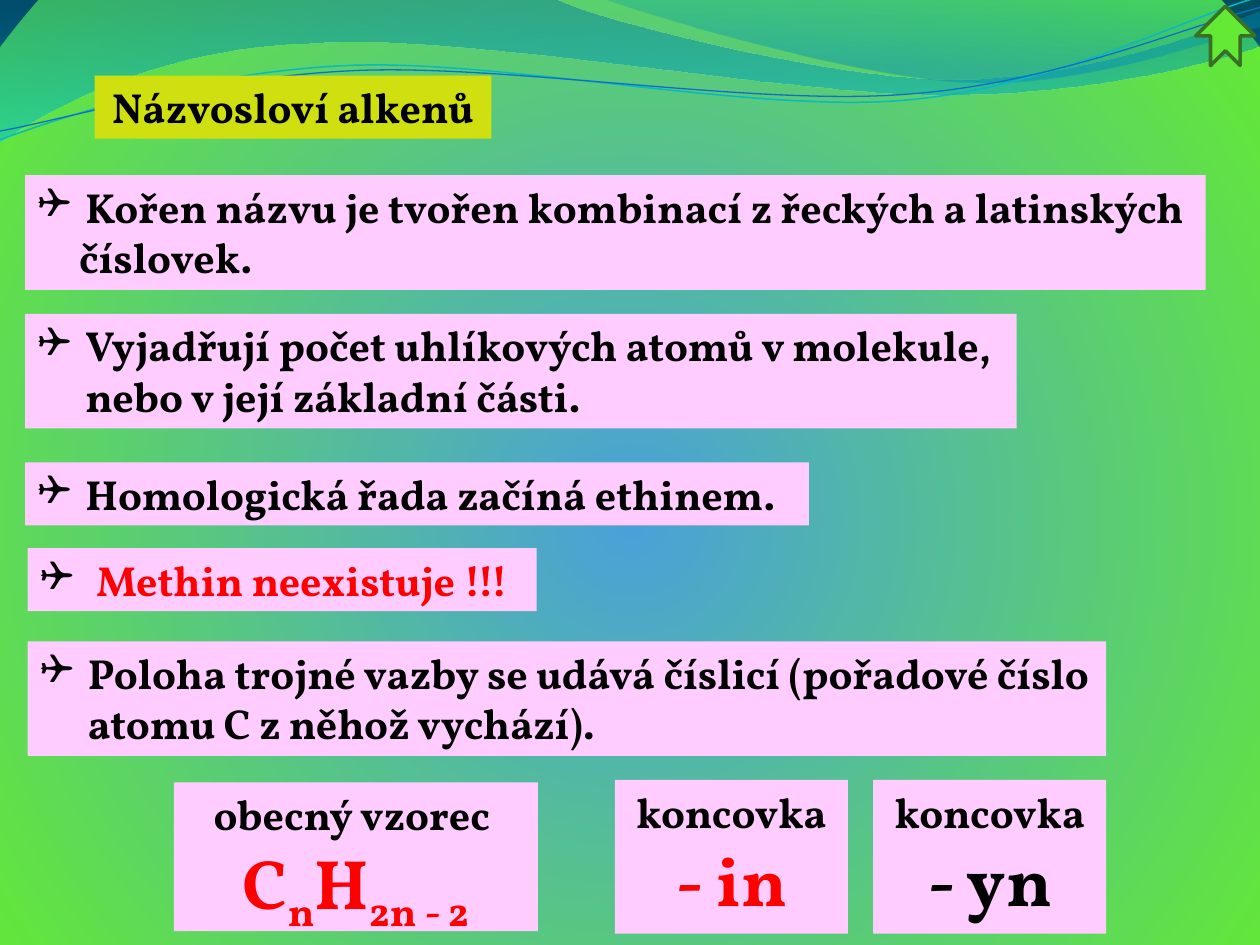
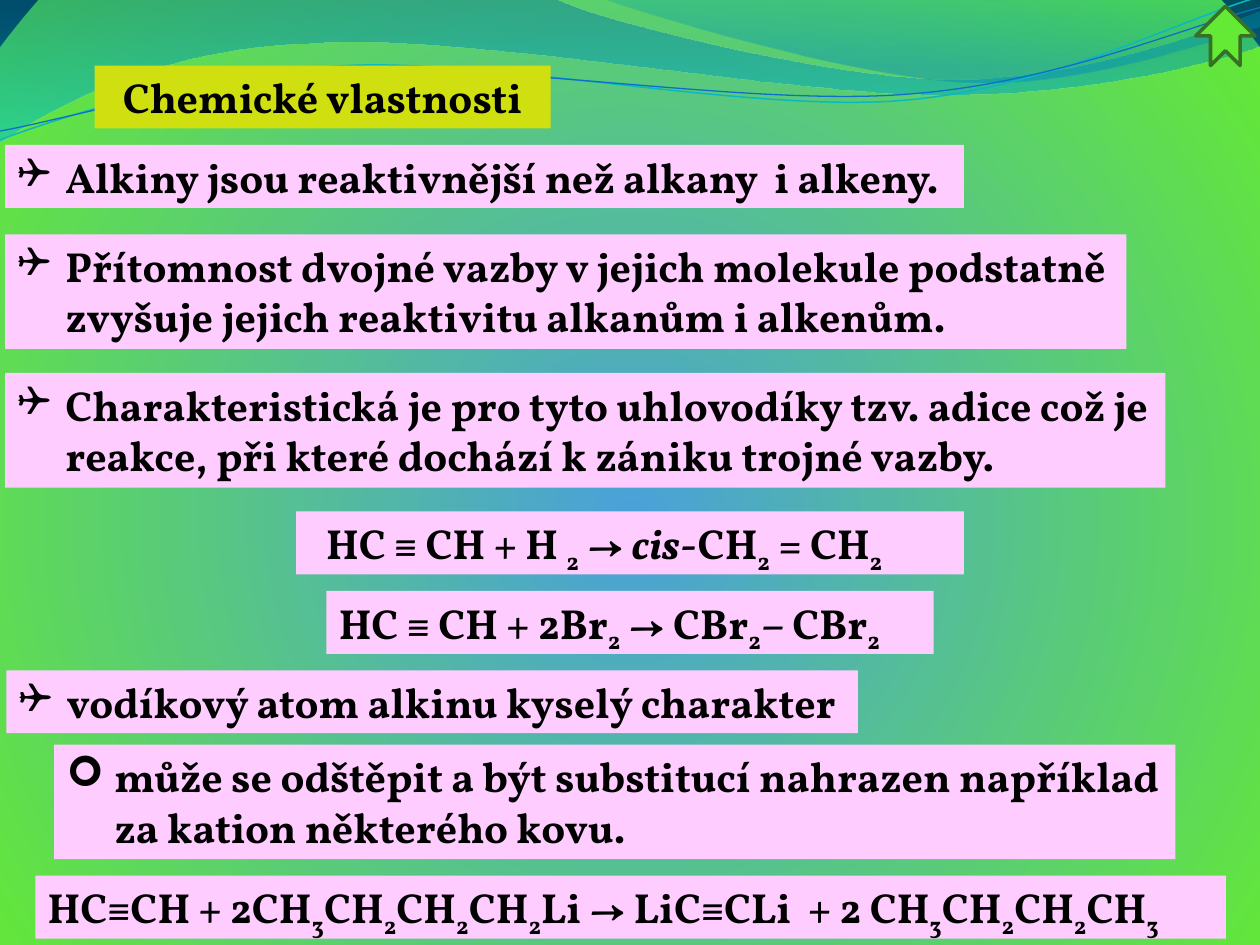
import lxml.etree
import pptx
import pptx.dml.color
import pptx.enum.shapes
import pptx.enum.text
import pptx.oxml
import pptx.oxml.ns
import pptx.util

Inches, Pt = pptx.util.Inches, pptx.util.Pt
qn = pptx.oxml.ns.qn
text_enum = pptx.enum.text

BLACK, RED, PINK, LIME, GREEN = "000000", "FF0000", "FFCCFF", "D0DF0F", "64E935"
FONT = {"name": "Vollkorn", "bold": True}
FRAME = {
    "word_wrap": True,
    "vertical_anchor": text_enum.MSO_ANCHOR.TOP,
    "margin_left": Inches(0.1), "margin_right": Inches(0.1),
    "margin_top": Inches(0.05), "margin_bottom": Inches(0.05),
}
# Left margin and first-line indent of each kind of paragraph
DENT = {"❑": (0.38, -0.38), "➢": (0.38, -0.38), "inset": (0.14, 0), "more": (0.33, 0)}


def tint(fill, shade):
    """Make a fill (of a shape, line or font) solid in a hex colour."""
    fill.solid()
    fill.fore_color.rgb = pptx.dml.color.RGBColor.from_string(shade)


def blend(fill, root, stops, aim):
    """Set a gradient of (percent, hex, opacity) stops; aim is its direction as XML."""
    fill.gradient()
    old = root.find(".//" + qn("a:gradFill"))
    marks = "".join(
        f'<a:gs pos="{pos * 1000}"><a:srgbClr val="{shade}">'
        f'<a:alpha val="{alpha * 1000}"/></a:srgbClr></a:gs>'
        for pos, shade, alpha in stops)
    new = pptx.oxml.parse_xml(
        f'<a:gradFill {pptx.oxml.ns.nsdecls("a")} rotWithShape="1">'
        f"<a:gsLst>{marks}</a:gsLst>{aim}</a:gradFill>")
    old.getparent().replace(old, new)


deck = pptx.Presentation()
deck.slide_width, deck.slide_height = Inches(10), Inches(7.5)
master = deck.slide_master
slides = [deck.slides.add_slide(deck.slide_layouts[5]) for _ in range(2)]

# Shared background
blend(master.background.fill, master._element,
      [(0, "4AA0DA", 100), (100, GREEN, 100), (100, "002C40", 100)],
      '<a:path path="circle"><a:fillToRect l="10000" t="110000" r="10000" b="100000"/></a:path>')

# Waves: a start point, then line ends (2 numbers) or Bezier curves (6 numbers)
DOWN = '<a:lin ang="5400000" scaled="1"/>'
waves = [
    ([(0, 0), (4.4, -0.01), (4.76, 0.17, 6.64, 0.63, 7.58, 0.63),
      (8.53, 0.63, 9.58, 0.26, 10, 0.09), (10.01, 0.36),
      (9.83, 0.44, 8.7, 0.76, 7.46, 0.75), (6.22, 0.75, 3.82, 0.28, 2.57, 0.34),
      (1.29, 0.36, 0.46, 0.83, -0.01, 1.13)],
     [(0, "0074A1", 45), (100, "00C6CF", 55)], None),
    ([(4.79, -0.01), (5.09, 0.11, 6.82, 0.62, 7.69, 0.65),
      (8.56, 0.69, 9.61, 0.32, 10, 0.21), (10, 0)],
     [(0, "00A1A9", 30), (80, "008BBF", 45)], None),
    ([(0, 1.11), (0.48, 0.93, 1.58, 0.57, 2.77, 0.52),
      (3.95, 0.47, 5.93, 0.89, 7.13, 0.8), (8.33, 0.71, 9.38, 0.15, 9.98, -0.02)],
     None, ("0AB8BF", 0.85)),
    ([(0, 1.04), (0.47, 0.96, 1.64, 0.61, 2.83, 0.56),
      (4.03, 0.51, 5.97, 0.84, 7.17, 0.75), (8.36, 0.67, 9.41, 0.21, 10, 0.06)],
     None, ("0F6FC6", 0.75)),
]
for number, (route, stops, stroke) in enumerate(waves):
    ends = [(Inches(part[-2]), Inches(part[-1])) for part in route]
    pen = slides[0].shapes.build_freeform(*ends[0], scale=1.0)
    pen.add_line_segments(ends[1:], close=stops is not None)
    wave = pen.convert_to_shape()
    wave.shadow.inherit = False
    # Bend the straight segments that have control points
    legs = list(wave._element.iter(qn("a:lnTo")))
    for leg, part in zip(legs, route[1:]):
        if len(part) == 6:
            bend = lxml.etree.Element(qn("a:cubicBezTo"))
            for x, y in zip(part[::2], part[1::2]):
                dot = lxml.etree.SubElement(bend, qn("a:pt"))
                dot.set("x", str(Inches(x) - wave.left))
                dot.set("y", str(Inches(y) - wave.top))
            leg.getparent().replace(leg, bend)
    if stops:
        blend(wave.fill, wave._element, stops, DOWN)
        wave.line.fill.background()
    else:
        wave.fill.background()
        tint(wave.line.fill, stroke[0])
        wave.line.width = Pt(stroke[1])
    wave._element.nvSpPr.cNvPr.set("id", str(101 + number))
    master.shapes._spTree.append(wave._element)

# Boxes: left, top, width, height, kind, lines; a line is text or (text, size, colour, kind).
# In a text, "|" parts the runs, "_" opens a subscript, "*" an italic and "/" a new line;
# a leading "+" carries on the paragraph before.
names = [
    (0.75, 0.6, 3.15, 0.5, "title", ["Názvosloví alkenů"]),
    (0.2, 2.49, 7.87, 0.91, "❑",
     ["Vyjadřují počet uhlíkových atomů v molekule, |/nebo v její základní části."]),
    (0.2, 1.39, 9.37, 0.91, "❑",
     ["Kořen názvu je tvořen kombinací z řeckých a latinských ",
      ("číslovek.", 24, BLACK, "more")]),
    (0.2, 3.67, 6.22, 0.5, "❑", ["Homologická řada začíná ethinem."]),
    (1.38, 6.21, 2.89, 1.18, "centre",
     ["obecný vzorec  ", ("+C|_n|H|_2n - 2", 40, RED, "centre")]),
    (4.88, 6.19, 1.85, 1.22, "centre", ["koncovka", ("- in", 40, RED, "centre")]),
    (0.22, 5.09, 8.56, 0.91, "❑",
     ["Poloha trojné vazby se udává číslicí (pořadové číslo atomu C z něhož vychází)."]),
    (0.22, 4.35, 4.04, 0.5, "❑", [" ", ("+Methin neexistuje !!!", 24, RED, "❑")]),
    (6.93, 6.19, 1.85, 1.22, "centre", ["koncovka", ("- yn", 40, BLACK, "centre")]),
]
traits = [
    (0.75, 0.52, 3.62, 0.5, "title", ["Chemické vlastnosti"]),
    (0.04, 1.15, 7.61, 0.5, "❑", ["Alkiny jsou reaktivnější než alkany  i alkeny."]),
    (0.04, 1.86, 8.9, 0.91, "❑",
     ["Přítomnost dvojné vazby v jejich molekule podstatně "
      "zvyšuje jejich reaktivitu alkanům i alkenům."]),
    (0.04, 2.96, 9.21, 0.91, "❑",
     ["Charakteristická je pro tyto uhlovodíky tzv. adice což je "
      "reakce, při které dochází k zániku trojné vazby."]),
    (2.35, 4.06, 5.3, 0.5, "inset", ["HC ≡ CH + H |_2| → |*cis|-CH|_2| = CH|_2"]),
    (0.43, 5.91, 8.9, 0.91, "➢",
     ["může se odštěpit a být substitucí nahrazen například za kation některého kovu."]),
    (0.05, 5.32, 6.76, 0.5, "❑", ["vodíkový atom alkinu kyselý charakter"]),
    (2.59, 4.69, 4.82, 0.5, "plain", ["HC ≡ CH + 2Br|_2| → CBr|_2|– CBr|_2"]),
    (0.28, 6.95, 9.45, 0.5, "plain",
     ["HC≡CH + 2CH|_3|CH|_2|CH|_2|CH|_2|Li → LiC≡CLi  + 2 CH|_3|CH|_2|CH|_2|CH|_3"]),
]

for slide, boxes in zip(slides, (names, traits)):
    for left, top, width, height, kind, lines in boxes:
        place = [Inches(v) for v in (left, top, width, height)]
        if kind == "title":
            box = slide.shapes.title
            box.left, box.top, box.width, box.height = place
        else:
            box = slide.shapes.add_textbox(*place)
        tint(box.fill, LIME if kind == "title" else PINK)
        frame = box.text_frame
        for key, value in FRAME.items():
            setattr(frame, key, value)
        size_rule = text_enum.MSO_AUTO_SIZE
        frame.auto_size = size_rule.NONE if kind == "title" else size_rule.SHAPE_TO_FIT_TEXT
        for i, line in enumerate(lines):
            words, size, shade, sort = (
                (line, 24, BLACK, kind) if isinstance(line, str) else line)
            if not words.startswith("+"):
                para = frame.add_paragraph() if i else frame.paragraphs[0]
                centred = sort in ("title", "centre")
                para.alignment = text_enum.PP_ALIGN.CENTER if centred else text_enum.PP_ALIGN.LEFT
                props = para._p.get_or_add_pPr()
                if sort in DENT:
                    for key, value in zip(("marL", "indent"), DENT[sort]):
                        props.set(key, str(Inches(value)))
                if sort in ("❑", "➢"):
                    lxml.etree.SubElement(props, qn("a:buFont")).set("typeface", "Wingdings")
                    lxml.etree.SubElement(props, qn("a:buChar")).set("char", sort)
            for piece in words.removeprefix("+").split("|"):
                if piece.startswith("/"):
                    para.add_line_break()
                run = para.add_run()
                run.text = piece.lstrip("_*/")
                for key, value in FONT.items():
                    setattr(run.font, key, value)
                run.font.size = Pt(size)
                tint(run.font.fill, shade)
                if piece.startswith("_"):
                    run._r.get_or_add_rPr().set("baseline", "-25000")
                elif piece.startswith("*"):
                    run.font.italic = True

    arrow = slide.shapes.add_shape(
        pptx.enum.shapes.MSO_SHAPE.NOTCHED_RIGHT_ARROW,
        Inches(9.49), Inches(0.05), Inches(0.47), Inches(0.47))
    arrow.rotation = 270
    arrow.shadow.inherit = False
    tint(arrow.fill, GREEN)
    tint(arrow.line.fill, "387026")
    arrow.line.width = Pt(2)

deck.save("out.pptx")
